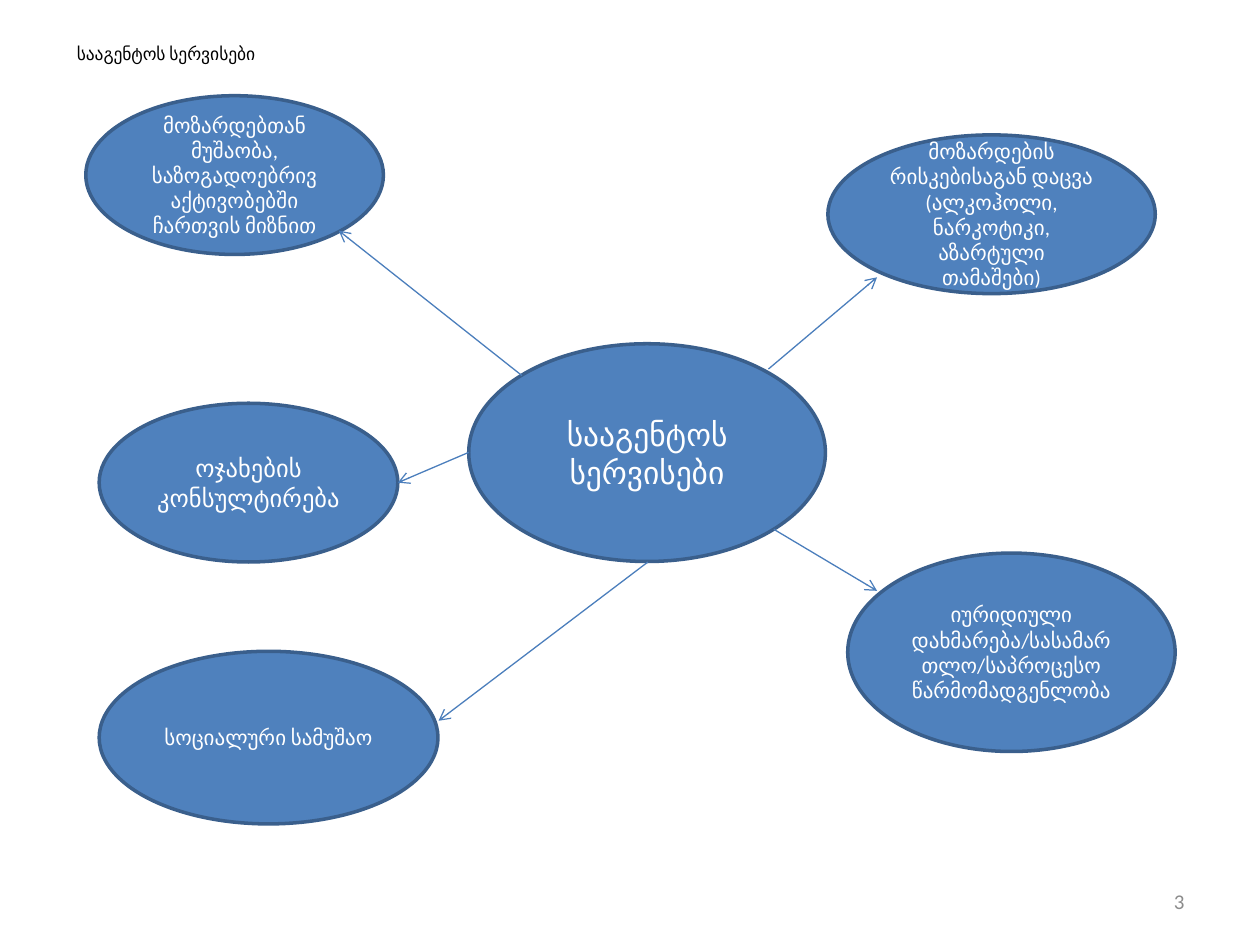
from dataclasses import dataclass

from lxml.etree import SubElement
from pptx import Presentation
from pptx.dml.color import RGBColor
from pptx.enum.shapes import MSO_CONNECTOR, MSO_SHAPE
from pptx.enum.text import MSO_ANCHOR, PP_ALIGN
from pptx.oxml.ns import qn
from pptx.util import Cm, Pt


@dataclass(frozen=True)
class Theme:
    font: str = "Calibri"
    black: str = "000000"
    white: str = "FFFFFF"
    gray: str = "8C8C8C"
    fill: str = "4F81BD"
    outline: str = "3A5F8C"
    arrow: str = "4B7EBC"
    title_size: float = 10
    small_size: float = 12
    medium_size: float = 14
    hub_size: float = 18
    outline_width: float = 2
    arrow_width: float = 0.75


class Diagram:
    """Draws styled elements on the current slide; all lengths are in cm."""

    def __init__(self, s, theme):
        self.s = s
        self.theme = theme

    def set_text(self, sp, text, size, color, align, anchor):
        tf = sp.text_frame
        tf.word_wrap = True
        tf.vertical_anchor = anchor
        p = tf.paragraphs[0]
        p.text = text
        p.alignment = align
        p.font.name = self.theme.font
        p.font.size = Pt(size)
        p.font.color.rgb = RGBColor.from_string(color)
        return p

    def label(self, box, text, size, color, align=PP_ALIGN.LEFT, anchor=MSO_ANCHOR.TOP):
        sp = self.s.shapes.add_textbox(*map(Cm, box))
        return self.set_text(sp, text, size, color, align, anchor)

    def ellipse(self, box, text, size):
        sp = self.s.shapes.add_shape(MSO_SHAPE.OVAL, *map(Cm, box))
        sp.shadow.inherit = False
        sp.fill.solid()
        sp.fill.fore_color.rgb = RGBColor.from_string(self.theme.fill)
        sp.line.color.rgb = RGBColor.from_string(self.theme.outline)
        sp.line.width = Pt(self.theme.outline_width)
        self.set_text(sp, text, size, self.theme.white, PP_ALIGN.CENTER, MSO_ANCHOR.MIDDLE)

    def arrow(self, start, end):
        sp = self.s.shapes.add_connector(MSO_CONNECTOR.STRAIGHT, *map(Cm, start + end))
        sp.line.color.rgb = RGBColor.from_string(self.theme.arrow)
        sp.line.width = Pt(self.theme.arrow_width)
        props = sp.element.spPr
        SubElement(props.find(qn("a:ln")), qn("a:tailEnd"), type="arrow")
        SubElement(props, qn("a:effectLst"))


def main():
    prs = Presentation()
    prs.slide_width, prs.slide_height = Cm(25.4), Cm(19.05)
    theme = Theme()
    d = Diagram(prs.slides.add_slide(prs.slide_layouts[6]), theme)

    title = "სააგენტოს სერვისები"
    p = d.label((1.3, 0.74, 22.86, 15.49), title, theme.title_size, theme.black)
    p.space_before = Pt(2)
    d.label((18.21, 17.65, 5.92, 1.02), "3", theme.small_size, theme.gray,
            PP_ALIGN.RIGHT, MSO_ANCHOR.MIDDLE)

    d.ellipse((9.45, 6.93, 7.19, 4.39), title, theme.hub_size)

    # Each service: ellipse box, text, type size, arrow start at the hub, arrow end
    services = [
        ((1.73, 1.93, 6, 3.2),
         "მოზარდებთან მუშაობა, საზოგადოებრივ აქტივობებში ჩართვის მიზნით",
         theme.small_size, (10.52, 7.57), (6.83, 4.65)),
        ((16.69, 2.72, 6.6, 3.2),
         "მოზარდების რისკებისაგან დაცვა (ალკოჰოლი, ნარკოტიკი, აზარტული თამაშები)",
         theme.small_size, (15.49, 7.44), (17.68, 5.59)),
        ((17.09, 11.15, 6.6, 4),
         "იურიდიული დახმარება/სასამართლო/საპროცესო წარმომადგენლობა",
         theme.small_size, (15.6, 10.67), (17.68, 11.91)),
        ((2, 13.13, 6.83, 3.48), "სოციალური სამუშაო",
         theme.small_size, (13.06, 11.33), (8.84, 14.53)),
        ((2, 8.13, 6.02, 3.2), "ოჯახების კონსულტირება",
         theme.medium_size, (9.45, 9.12), (8.02, 9.73)),
    ]
    for box, text, size, start, end in services:
        d.ellipse(box, text, size)
        d.arrow(start, end)

    prs.save("out.pptx")


if __name__ == "__main__":
    main()
